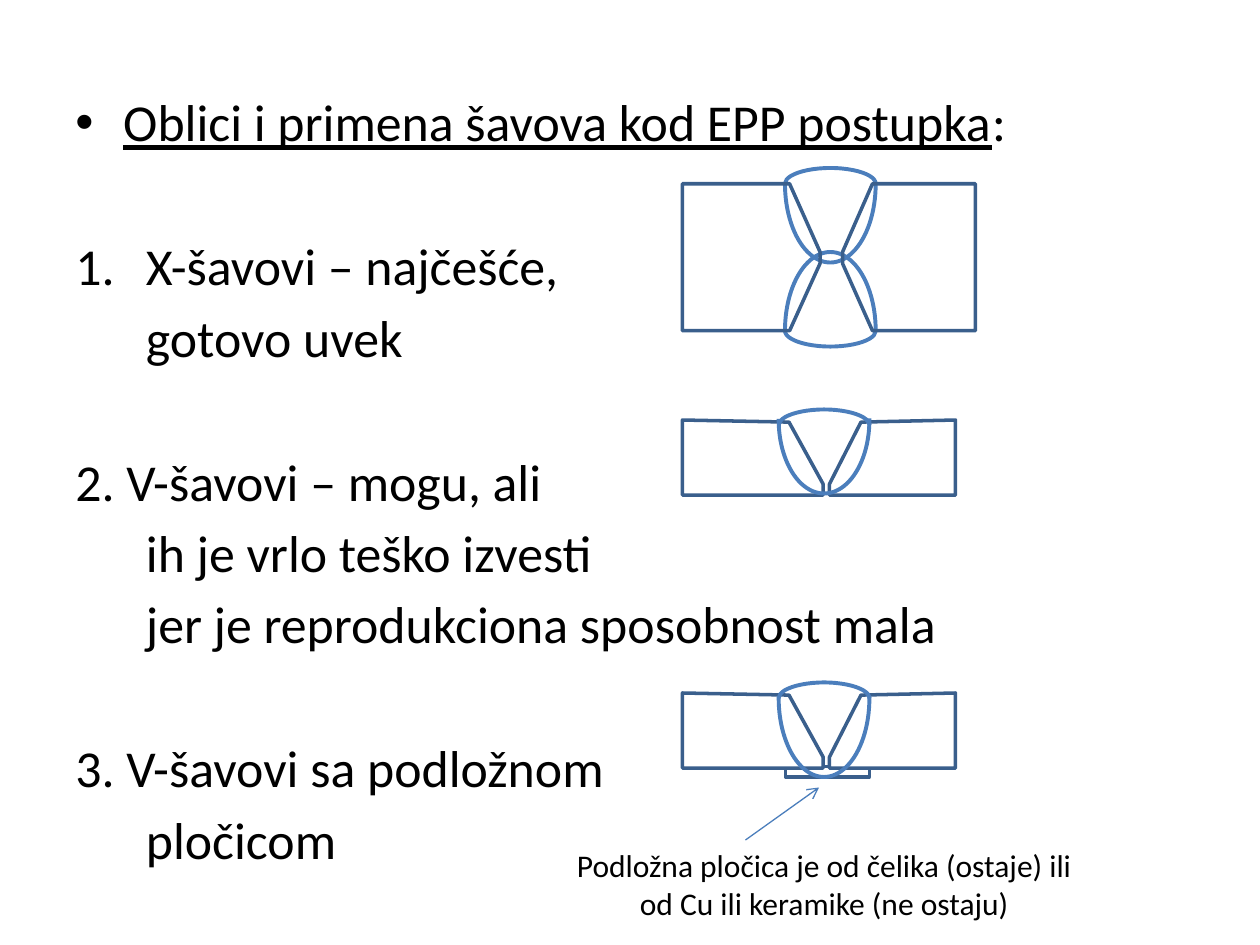
from dataclasses import dataclass

from lxml import etree
from pptx import Presentation
from pptx.dml.color import RGBColor
from pptx.enum.shapes import MSO_CONNECTOR, MSO_SHAPE
from pptx.enum.text import MSO_ANCHOR, PP_ALIGN
from pptx.oxml.ns import qn
from pptx.util import Inches, Pt

BLACK = RGBColor(0x00, 0x00, 0x00)
WHITE = RGBColor(0xFF, 0xFF, 0xFF)
PLATE_BLUE = RGBColor(0x3A, 0x5F, 0x8C)
SEAM_BLUE = RGBColor(0x4B, 0x7E, 0xBC)
ARC, RECT = MSO_SHAPE.ARC, MSO_SHAPE.RECTANGLE
STRAIGHT = MSO_CONNECTOR.STRAIGHT
TOP = MSO_ANCHOR.TOP
LEFT, CENTER = PP_ALIGN.LEFT, PP_ALIGN.CENTER

CELLS_PER_INCH = 12
SEAM_WIDTH, CAP_HEIGHT = 8.64, 3
CAP_ARC, ROOT_ARC = (108.22, 0), (106.74, 0.92)
BODY_SIZE, BODY_GAP, BLANK_GAP = 29.6, 5.3, 46.7

Points = list[tuple[float, float]]


@dataclass
class Line:
    text: str
    margin: float = 0.56
    hang: float = 0.56
    gap: float = BODY_GAP
    bullet: tuple[str, str, str] | None = None
    tail: str = ""


@dataclass
class VJoint:
    top: float
    root_height: float
    backing: bool = False


LINES = [
    Line("Oblici i primena šavova kod EPP postupka", 0.38, 0.38,
         bullet=("a:buChar", "char", "•"), tail=":"),
    Line("X-šavovi – najčešće,", gap=BLANK_GAP,
         bullet=("a:buAutoNum", "type", "arabicPeriod")),
    Line("gotovo uvek", hang=0),
    Line("2. V-šavovi – mogu, ali", gap=BLANK_GAP),
    Line("ih je vrlo teško izvesti", hang=0),
    Line("jer je reprodukciona sposobnost mala", hang=0),
    Line("3. V-šavovi sa podložnom", gap=BLANK_GAP),
    Line("pločicom", hang=0),
]
X_PLATES = [
    [(75.2, 17.5), (65, 17.5), (65, 31.5), (75.2, 31.5), (78.1, 25.1), (78.1, 24)],
    [(83.1, 17.5), (92.9, 17.5), (92.9, 31.5), (83.1, 31.5), (80.25, 25.1), (80.25, 24)],
]
V_PLATES = [
    [(65, 0), (65, 7.15), (78.4, 7.15), (78.4, 6.1), (75.15, 0.2)],
    [(91, 0), (91, 7.15), (79, 7.15), (79, 6.1), (82, 0.2)],
]
V_JOINTS = [VJoint(40, 14), VJoint(66, 15, backing=True)]


def cells(*values: float) -> list[int]:
    return [round(Inches(v / CELLS_PER_INCH)) for v in values]


def add_text(p, text: str, *, size: float, underline: bool = False,
             align=LEFT) -> None:
    p.alignment = align
    r = p.add_run()
    r.text = text
    r.font.name = "Calibri"
    r.font.size = Pt(size)
    r.font.color.rgb = BLACK
    r.font.underline = underline


def add_box(shapes, x: float, y: float, w: float, h: float):
    tf = shapes.add_textbox(*cells(x, y, w, h)).text_frame
    tf.word_wrap = True
    tf.vertical_anchor = TOP
    return tf


def add_line(p, line: Line) -> None:
    p.space_before = Pt(line.gap)
    ppr = p._p.get_or_add_pPr()
    ppr.set("marL", str(Inches(line.margin)))
    ppr.set("indent", str(-Inches(line.hang)))
    if line.bullet:
        tag, key, value = line.bullet
        font = etree.SubElement(ppr, qn("a:buFont"))
        font.set("typeface", "Arial" if tag == "a:buChar" else "+mj-lt")
        etree.SubElement(ppr, qn(tag)).set(key, value)
    add_text(p, line.text, size=BODY_SIZE, underline=bool(line.tail))
    if line.tail:
        add_text(p, line.tail, size=BODY_SIZE)


def style(sp, color: RGBColor, width: float, fill: RGBColor | None = None) -> None:
    sp.shadow.inherit = False
    sp.line.color.rgb = color
    sp.line.width = Pt(width)
    if fill is None:
        sp.fill.background()
    else:
        sp.fill.solid()
        sp.fill.fore_color.rgb = fill


def add_plate(shapes, points: Points, dy: float = 0,
              fill: RGBColor | None = None) -> None:
    start, *rest = [tuple(cells(x, y + dy)) for x, y in points]
    builder = shapes.build_freeform(*start, scale=1.0)
    builder.add_line_segments(rest, close=True)
    style(builder.convert_to_shape(), PLATE_BLUE, 2, fill)


def add_arc(shapes, x: float, y: float, h: float, angles: tuple[float, float],
            rotation: float) -> None:
    sp = shapes.add_shape(ARC, *cells(x, y, SEAM_WIDTH, h))
    sp.adjustments[0], sp.adjustments[1] = angles
    sp.rotation = rotation
    style(sp, SEAM_BLUE, 2.25)


def add_seam(shapes, x: float, edge: float, root_height: float,
             flipped: bool = False) -> None:
    cap_top = edge - CAP_HEIGHT if flipped else edge
    root_top = edge + 6 - root_height if flipped else edge - 6
    add_arc(shapes, x, cap_top, CAP_HEIGHT, CAP_ARC, 180 if flipped else 0)
    add_arc(shapes, x, root_top, root_height, ROOT_ARC, 0 if flipped else 180)


def add_x_joint(shapes) -> None:
    add_seam(shapes, 74.76, 16, 15)
    add_seam(shapes, 74.76, 33, 15, flipped=True)
    for points in X_PLATES:
        add_plate(shapes, points)


def add_v_joint(shapes, joint: VJoint) -> None:
    if joint.backing:
        sp = shapes.add_shape(RECT, *cells(74.8, joint.top + 7, 8, 1))
        style(sp, PLATE_BLUE, 2, WHITE)
    for points in V_PLATES:
        add_plate(shapes, points, joint.top, WHITE)
    add_seam(shapes, 74.16, joint.top - 1, joint.root_height)


def add_arrow(shapes, x1: float, y1: float, x2: float, y2: float) -> None:
    cxn = shapes.add_connector(STRAIGHT, *cells(x1, y1, x2, y2))
    cxn.line.color.rgb = SEAM_BLUE
    cxn.line.width = Pt(0.75)
    etree.SubElement(cxn.line._get_or_add_ln(), qn("a:tailEnd")).set("type", "arrow")
    etree.SubElement(cxn._element.spPr, qn("a:effectLst"))


def main() -> None:
    prs = Presentation()
    prs.slide_width, prs.slide_height = Inches(10), Inches(7.5)
    s = prs.slides.add_slide(prs.slide_layouts[6])

    tf = add_box(s.shapes, 6, 8, 108, 72.4)
    for i, line in enumerate(LINES):
        add_line(tf.add_paragraph() if i else tf.paragraphs[0], line)

    add_x_joint(s.shapes.add_group_shape().shapes)
    for joint in V_JOINTS:
        add_v_joint(s.shapes.add_group_shape().shapes, joint)

    tf = add_box(s.shapes, 52, 80, 53, 8.5)
    add_text(tf.paragraphs[0], "Podložna pločica je od čelika (ostaje) ili "
             "od Cu ili keramike (ne ostaju)", size=18, align=CENTER)
    add_arrow(s.shapes, 71, 80, 78, 75)
    prs.save("out.pptx")


if __name__ == "__main__":
    main()
